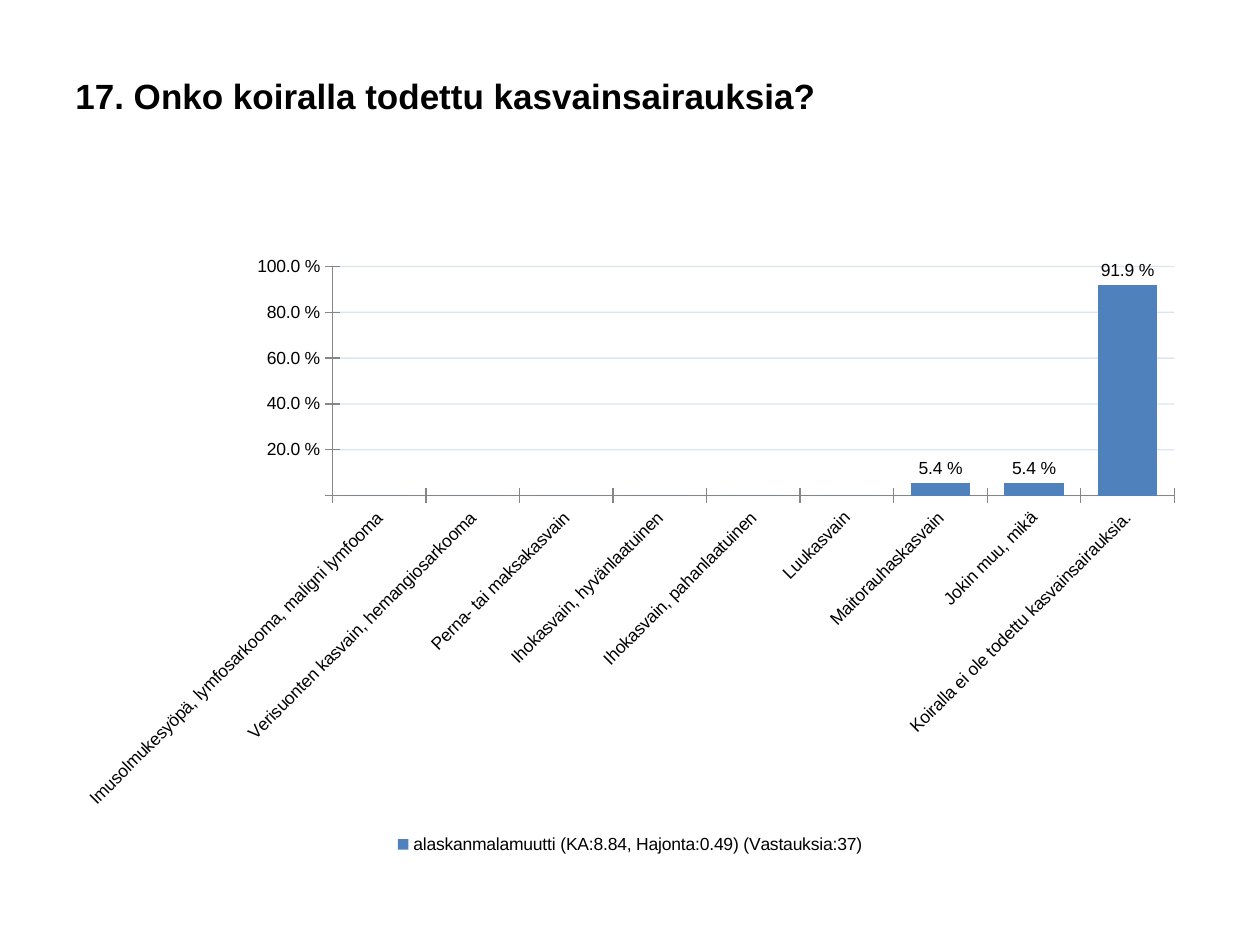
from lxml import etree
from pptx import Presentation
from pptx.chart.data import CategoryChartData
from pptx.dml.color import RGBColor
from pptx.enum.chart import XL_CHART_TYPE, XL_LABEL_POSITION, XL_LEGEND_POSITION, XL_TICK_MARK
from pptx.enum.text import MSO_ANCHOR
from pptx.oxml.ns import qn
from pptx.util import Inches, Pt

COLUMNS = XL_CHART_TYPE.COLUMN_CLUSTERED
OUTSIDE_END = XL_LABEL_POSITION.OUTSIDE_END
BOTTOM = XL_LEGEND_POSITION.BOTTOM
CROSS = XL_TICK_MARK.CROSS
NO_TICK = XL_TICK_MARK.NONE
MIDDLE = MSO_ANCHOR.MIDDLE

COLORS = {"text": "000000", "bar": "4F81BD", "axis": "868686"}
FONT = "Arial"
PERCENT = "0.0\\ %;;;"  # zeros stay hidden

TITLE = "17. Onko koiralla todettu kasvainsairauksia?"
SERIES = "alaskanmalamuutti (KA:8.84, Hajonta:0.49) (Vastauksia:37)"
ANSWERS = {
    "Imusolmukesyöpä, lymfosarkooma, maligni lymfooma": 0,
    "Verisuonten kasvain, hemangiosarkooma": 0,
    "Perna- tai maksakasvain": 0,
    "Ihokasvain, hyvänlaatuinen": 0,
    "Ihokasvain, pahanlaatuinen": 0,
    "Luukasvain": 0,
    "Maitorauhaskasvain": 0.054,
    "Jokin muu, mikä": 0.054,
    "Koiralla ei ole todettu kasvainsairauksia.": 0.919,
}


def color(name):
    return RGBColor.from_string(COLORS[name])


def style_font(font, size, bold=False):
    font.name = FONT
    font.size = Pt(size)
    font.bold = bold
    font.color.rgb = color("text")


def add_title(page, left, top, width, height):
    box = page.shapes.add_textbox(left, top, width, height)
    frame = box.text_frame
    frame.word_wrap = True
    frame.vertical_anchor = MIDDLE
    span = frame.paragraphs[0].add_run()
    span.text = TITLE
    style_font(span.font, 20, bold=True)


def style_axis(axis):
    axis.major_tick_mark = CROSS
    axis.minor_tick_mark = NO_TICK
    axis.format.line.color.rgb = color("axis")
    axis.format.line.width = Pt(0.75)
    labels = axis.tick_labels
    labels.number_format = PERCENT
    labels.number_format_is_linked = False
    style_font(labels.font, 10)


def style_gridlines(chart):
    line = chart.value_axis.major_gridlines.format.line
    line.width = Pt(0.75)
    line.color.rgb = color("bar")
    tint = chart.element.xpath(".//c:majorGridlines//a:srgbClr")[0]
    etree.SubElement(tint, qn("a:alpha"), val="20000")


def slant_category_labels(chart):
    body = chart.element.xpath(".//c:catAx/c:txPr/a:bodyPr")[0]
    body.set("rot", "-2700000")  # 45 degrees upwards
    body.set("vert", "horz")


def style_bars(plot):
    plot.gap_width = 58
    plot.vary_by_categories = False
    bars = plot.series[0]
    bars.format.fill.solid()
    bars.format.fill.fore_color.rgb = color("bar")
    labels = bars.data_labels
    labels.show_value = True
    labels.number_format = PERCENT
    labels.number_format_is_linked = False
    labels.position = OUTSIDE_END
    style_font(labels.font, 10)


def add_answer_chart(page, left, top, width, height):
    data = CategoryChartData(number_format=PERCENT)
    data.categories = list(ANSWERS)
    data.add_series(SERIES, list(ANSWERS.values()))
    chart = page.shapes.add_chart(COLUMNS, left, top, width, height, data).chart
    chart.has_title = False
    style_font(chart.font, 10)

    for axis in (chart.category_axis, chart.value_axis):
        style_axis(axis)
    slant_category_labels(chart)

    scale = chart.value_axis
    scale.minimum_scale, scale.maximum_scale, scale.major_unit = 0, 1, 0.2
    style_gridlines(chart)

    style_bars(chart.plots[0])
    chart.has_legend = True
    chart.legend.position = BOTTOM
    chart.legend.include_in_layout = False
    style_font(chart.legend.font, 10)


def main():
    deck = Presentation()
    deck.slide_width, deck.slide_height = Inches(10), Inches(7.5)
    page = deck.slides.add_slide(deck.slide_layouts[6])
    left, width = Inches(0.5), Inches(9)
    add_title(page, left, Inches(0.36), width, Inches(0.79))
    add_answer_chart(page, left, Inches(1.94), width, Inches(4.88))
    deck.save("out.pptx")


if __name__ == "__main__":
    main()
